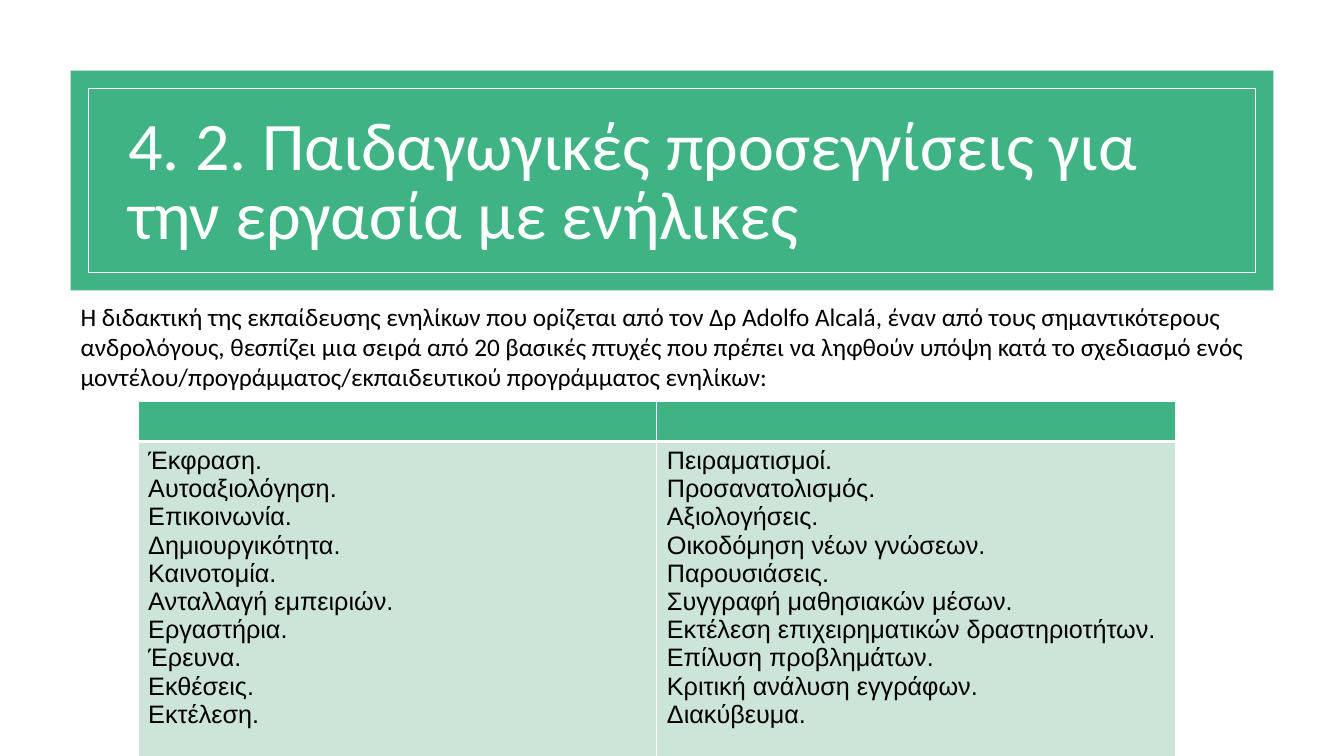
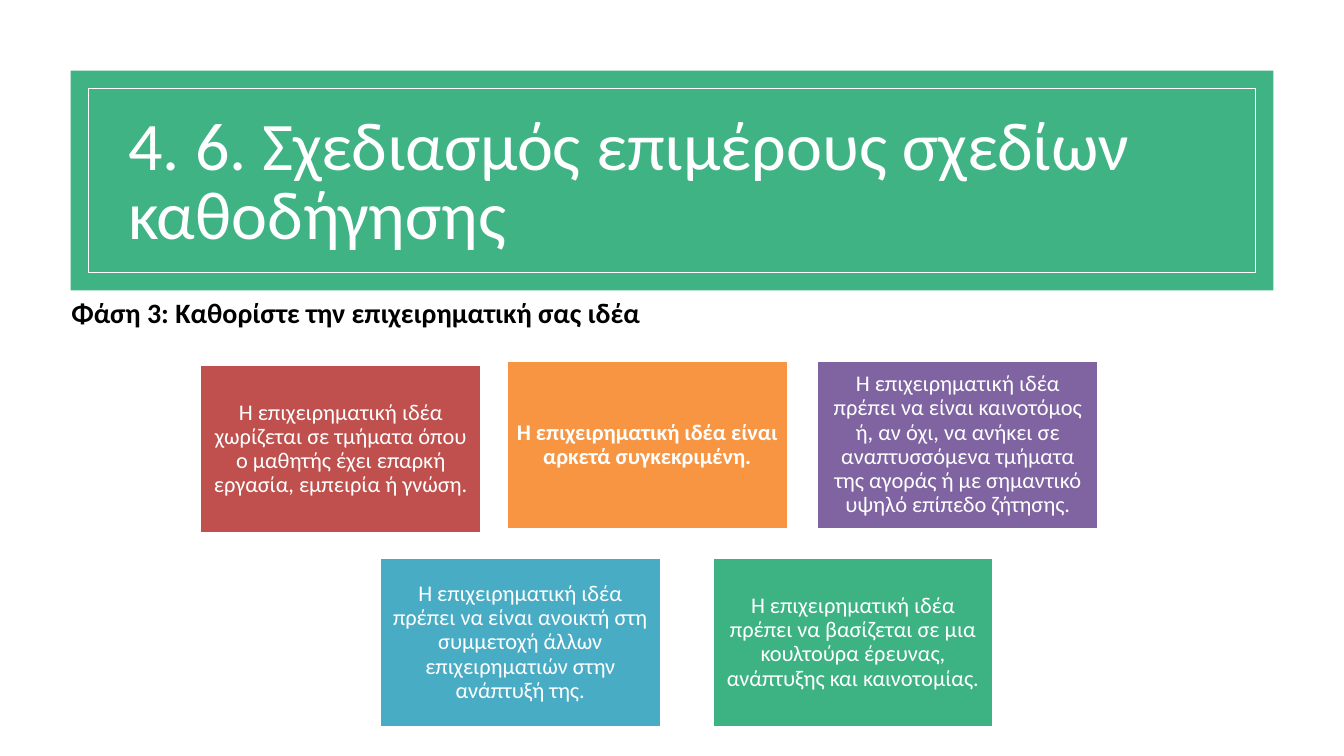
from lxml import etree
from pptx import Presentation
from pptx.dml.color import RGBColor
from pptx.enum.shapes import MSO_SHAPE
from pptx.enum.text import MSO_ANCHOR, MSO_AUTO_SIZE, PP_ALIGN
from pptx.oxml.ns import qn
from pptx.util import Inches, Pt

RECTANGLE = MSO_SHAPE.RECTANGLE
MIDDLE, TOP = MSO_ANCHOR.MIDDLE, MSO_ANCHOR.TOP
LEFT, CENTER = PP_ALIGN.LEFT, PP_ALIGN.CENTER
NO_AUTOFIT = MSO_AUTO_SIZE.NONE

COLORS = {
    "band": "40B385",
    "table_body": "CDE4D8",
    "white": "FFFFFF",
    "black": "000000",
    "red": "BF504D",
    "orange": "F79543",
    "purple": "8064A2",
    "blue": "49ACC5",
    "green": "3DB384",
}
TITLE_FONT = {"name": "Calibri", "size": Pt(48.6), "color": "white"}
INTRO_FONT = {"name": "Calibri", "size": Pt(18), "color": "black"}
PHASE_FONT = {"name": "Calibri", "size": Pt(20), "bold": True, "color": "black"}
TABLE_FONT = {"name": "Arial", "size": Pt(18), "color": "black"}
CARD_FONT = {"name": "Calibri", "size": Pt(16), "color": "white"}

BAND_BOX = (0.7, 0.7, 11.93, 2.18)
BAND_INSET = 0.18
CARD_SIZE = (2.78, 1.67)
CARD_MARGIN = 0.07

INTRO = (
    "Η διδακτική της εκπαίδευσης ενηλίκων που ορίζεται από τον Δρ Adolfo Alcalá, "
    "έναν από τους σημαντικότερους ανδρολόγους, θεσπίζει μια σειρά από 20 βασικές "
    "πτυχές που πρέπει να ληφθούν υπόψη κατά το σχεδιασμό ενός "
    "μοντέλου/προγράμματος/εκπαιδευτικού προγράμματος ενηλίκων:"
)
ASPECTS = [
    [
        "Έκφραση.", "Αυτοαξιολόγηση.", "Επικοινωνία.", "Δημιουργικότητα.",
        "Καινοτομία.", "Ανταλλαγή εμπειριών.", "Εργαστήρια.", "Έρευνα.",
        "Εκθέσεις.", "Εκτέλεση.",
    ],
    [
        "Πειραματισμοί.", "Προσανατολισμός.", "Αξιολογήσεις.",
        "Οικοδόμηση νέων γνώσεων.", "Παρουσιάσεις.",
        "Συγγραφή μαθησιακών μέσων.",
        "Εκτέλεση επιχειρηματικών δραστηριοτήτων.", "Επίλυση προβλημάτων.",
        "Κριτική ανάλυση εγγράφων.", "Διακύβευμα.",
    ],
]
# Left, top, colour, bold, text
IDEA_CARDS = [
    (1.99, 3.62, "red", False,
     "Η επιχειρηματική ιδέα χωρίζεται σε τμήματα όπου ο μαθητής έχει επαρκή "
     "εργασία, εμπειρία ή γνώση."),
    (5.03, 3.58, "orange", True,
     "Η επιχειρηματική ιδέα είναι αρκετά συγκεκριμένη."),
    (8.11, 3.58, "purple", False,
     "Η επιχειρηματική ιδέα πρέπει να είναι καινοτόμος ή, αν όχι, να ανήκει σε "
     "αναπτυσσόμενα τμήματα της αγοράς ή με σημαντικό υψηλό επίπεδο ζήτησης."),
    (3.77, 5.54, "blue", False,
     "Η επιχειρηματική ιδέα πρέπει να είναι ανοικτή στη συμμετοχή άλλων "
     "επιχειρηματιών στην ανάπτυξή της."),
    (7.07, 5.54, "green", False,
     "Η επιχειρηματική ιδέα πρέπει να βασίζεται σε μια κουλτούρα έρευνας, "
     "ανάπτυξης και καινοτομίας."),
]


def rgb(color):
    return RGBColor.from_string(COLORS[color])


def to_inches(box):
    return [Inches(length) for length in box]


def write_text(frame, lines, font, align=LEFT, anchor=TOP, spacing=1.0):
    frame.word_wrap = True
    frame.vertical_anchor = anchor
    frame.text = "\n".join(lines)
    for paragraph in frame.paragraphs:
        paragraph.alignment = align
        paragraph.line_spacing = spacing
        for run in paragraph.runs:
            for key, value in font.items():
                if key == "color":
                    run.font.color.rgb = rgb(value)
                else:
                    setattr(run.font, key, value)


def add_rectangle(slide, box, fill=None, line=None, line_width=1.0):
    shape = slide.shapes.add_shape(RECTANGLE, *to_inches(box))
    shape.shadow.inherit = False
    if fill:
        shape.fill.solid()
        shape.fill.fore_color.rgb = rgb(fill)
    else:
        shape.fill.background()
    if line:
        shape.line.color.rgb = rgb(line)
        shape.line.width = Pt(line_width)
    else:
        shape.line.fill.background()
    return shape


def add_text(slide, box, text, font):
    text_box = slide.shapes.add_textbox(*to_inches(box))
    write_text(text_box.text_frame, [text], font)


def add_banner_slide(presentation, text, title_width):
    """Add a title-only slide with its title on the framed band."""
    slide = presentation.slides.add_slide(presentation.slide_layouts[5])
    left, top, width, height = BAND_BOX
    frame_box = (left + BAND_INSET, top + BAND_INSET,
                 width - 2 * BAND_INSET, height - 2 * BAND_INSET)
    add_rectangle(slide, BAND_BOX, fill="band")
    add_rectangle(slide, frame_box, line="white", line_width=0.75)

    title = slide.shapes.title
    title_box = (left + 0.47, top + 0.46, title_width, 1.34)
    title.left, title.top, title.width, title.height = to_inches(title_box)
    title.text_frame.auto_size = NO_AUTOFIT
    write_text(title.text_frame, [text], TITLE_FONT, anchor=MIDDLE, spacing=0.85)
    slide.shapes._spTree.append(title._element)  # bring in front of the band
    return slide


def set_borders(cell, widths):
    """Draw white cell borders; widths maps L, R, T and B, in that order, to points."""
    properties = cell._tc.get_or_add_tcPr()
    for index, (side, width) in enumerate(widths.items()):
        line = etree.Element(qn(f"a:ln{side}"), w=str(Pt(width)))
        fill = etree.SubElement(line, qn("a:solidFill"))
        etree.SubElement(fill, qn("a:srgbClr"), val=COLORS["white"])
        properties.insert(index, line)


def add_aspects_table(slide, box, row_heights):
    table = slide.shapes.add_table(2, len(ASPECTS), *to_inches(box)).table
    table.horz_banding = False
    for row, height in zip(table.rows, row_heights):
        row.height = Inches(height)
    for column, lines in enumerate(ASPECTS):
        header, body = table.cell(0, column), table.cell(1, column)
        write_text(body.text_frame, lines, TABLE_FONT)
        for cell, fill, top, bottom in ((header, "band", 1, 3),
                                        (body, "table_body", 3, 1)):
            cell.fill.solid()
            cell.fill.fore_color.rgb = rgb(fill)
            set_borders(cell, {"L": 1, "R": 1, "T": top, "B": bottom})


def add_idea_card(slide, left, top, color, bold, text):
    card = add_rectangle(slide, (left, top, *CARD_SIZE), fill=color, line="white")
    frame = card.text_frame
    for side in ("left", "right", "top", "bottom"):
        setattr(frame, f"margin_{side}", Inches(CARD_MARGIN))
    write_text(frame, [text], {**CARD_FONT, "bold": bold}, CENTER, MIDDLE, 0.9)


def build_approaches_slide(presentation):
    slide = add_banner_slide(
        presentation,
        "4. 2. Παιδαγωγικές προσεγγίσεις για την εργασία με ενήλικες", 10.98)
    add_text(slide, (0.7, 2.94, 12.02, 1), INTRO, INTRO_FONT)
    add_aspects_table(slide, (1.37, 3.98, 10.29, 3.52), (0.38, 3.14))


def build_business_idea_slide(presentation):
    slide = add_banner_slide(
        presentation, "4. 6. Σχεδιασμός επιμέρους σχεδίων καθοδήγησης", 10.54)
    add_text(slide, (0.61, 2.88, 9.54, 0.5),
             "Φάση 3: Καθορίστε την επιχειρηματική σας ιδέα", PHASE_FONT)
    for card in IDEA_CARDS:
        add_idea_card(slide, *card)


def main():
    presentation = Presentation()
    presentation.slide_width = Inches(13.33)
    presentation.slide_height = Inches(7.5)
    build_approaches_slide(presentation)
    build_business_idea_slide(presentation)
    presentation.save("out.pptx")


if __name__ == "__main__":
    main()
